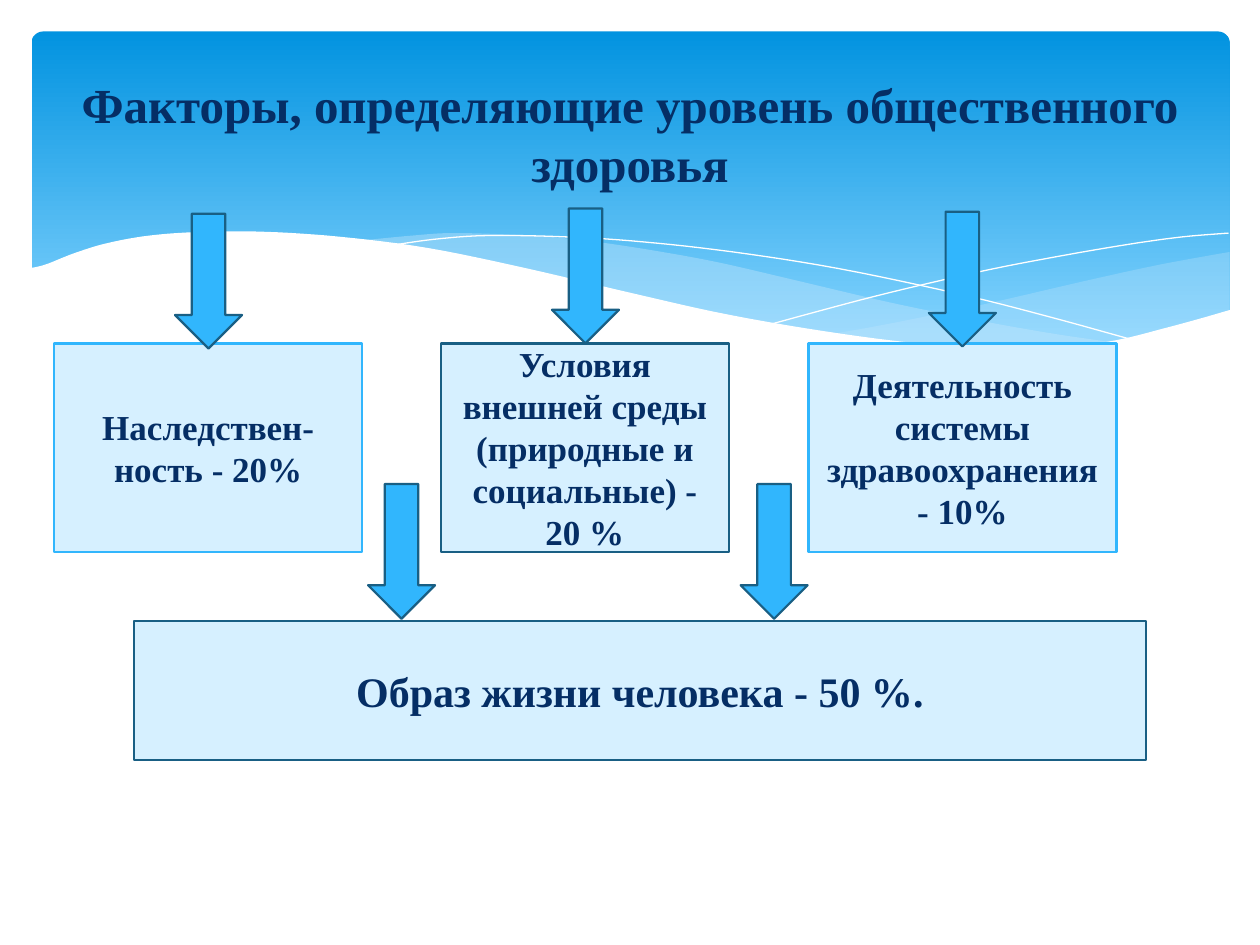
from dataclasses import dataclass

from lxml.etree import SubElement
from pptx import Presentation
from pptx.dml.color import RGBColor
from pptx.enum.shapes import MSO_SHAPE as Preset
from pptx.enum.text import MSO_ANCHOR as Anchor, PP_ALIGN as Align
from pptx.oxml.ns import qn
from pptx.util import Pt


@dataclass(frozen=True)
class Theme:
    font: str = "Times New Roman"
    text: str = "052E65"
    accent: str = "31B6FD"
    accent_dark: str = "195F84"
    box: str = "D6F0FF"
    banner_top: str = "0293E0"
    banner_bottom: str = "83D3FE"
    ripple: str = "C6E7FC"
    white: str = "FFFFFF"
    title_size: float = 28
    factor_size: float = 20
    main_size: float = 24
    outline: float = 1.25


def rgb(value):
    return RGBColor.from_string(value)


def write_text(shape, text, *, size, font, color, bold=True, align=Align.CENTER):
    frame = shape.text_frame
    frame.word_wrap = True
    frame.vertical_anchor = Anchor.MIDDLE
    paragraph = frame.paragraphs[0]
    paragraph.alignment = align
    run = paragraph.add_run()
    run.text = text
    run.font.size = Pt(size)
    run.font.name = font
    run.font.bold = bold
    run.font.color.rgb = rgb(color)


def smooth(knots, steps=6):
    """Return points on a Catmull-Rom curve through the knots."""
    padded = [knots[0], *knots, knots[-1]]
    points = [knots[0]]
    for a, b, c, d in zip(padded, padded[1:], padded[2:], padded[3:]):
        for step in range(1, steps + 1):
            t = step / steps
            points.append(tuple(
                (2 * q + (r - p) * t + (2 * p - 5 * q + 4 * r - s) * t ** 2
                 + (3 * q - p - 3 * r + s) * t ** 3) / 2
                for p, q, r, s in zip(a, b, c, d)))
    return points


class SlideBuilder:
    def __init__(self, slide, theme):
        self.slide = slide
        self.theme = theme

    def preset(self, kind, left, top, width, height, fill=None, line=None):
        shape = self.slide.shapes.add_shape(
            kind, Pt(left), Pt(top), Pt(width), Pt(height))
        self.paint(shape, fill, line, self.theme.outline)
        return shape

    def paint(self, shape, fill, line, width):
        shape.shadow.inherit = False
        if fill:
            shape.fill.solid()
            shape.fill.fore_color.rgb = rgb(fill)
        else:
            shape.fill.background()
        if line:
            shape.line.color.rgb = rgb(line)
            shape.line.width = Pt(width)
        else:
            shape.line.fill.background()

    def banner(self, left, top, width, height):
        shape = self.preset(Preset.ROUNDED_RECTANGLE, left, top, width, height)
        shape.adjustments[0] = 0.034
        shape.fill.gradient()
        shape.fill.gradient_angle = 270
        colors = (self.theme.banner_top, self.theme.banner_bottom)
        for stop, color, position in zip(shape.fill.gradient_stops, colors, (0, 0.9)):
            stop.color.rgb = rgb(color)
            stop.position = position

    def outline(self, points, closed):
        start, *rest = [(Pt(x), Pt(y)) for x, y in points]
        builder = self.slide.shapes.build_freeform(*start)
        builder.add_line_segments(rest, close=closed)
        return builder.convert_to_shape()

    def wave(self, points, fill, opacity=100):
        shape = self.outline(points, closed=True)
        self.paint(shape, fill, None, 0)
        if opacity < 100:
            color = shape.fill._xPr.find(f".//{qn('a:srgbClr')}")
            SubElement(color, qn("a:alpha"), val=str(opacity * 1000))

    def hairline(self, knots):
        shape = self.outline(smooth(knots), closed=False)
        self.paint(shape, None, self.theme.white, 0)

    def title(self, text, left, top, width, height):
        shape = self.slide.shapes.add_textbox(
            Pt(left), Pt(top), Pt(width), Pt(height))
        self.label(shape, text, self.theme.title_size)

    def label(self, shape, text, size):
        write_text(shape, text, size=size, font=self.theme.font,
                   color=self.theme.text)

    def box(self, text, left, top, width, height, line, size):
        shape = self.preset(Preset.RECTANGLE, left, top, width, height,
                            self.theme.box, line)
        self.label(shape, text, size)

    def arrow(self, left, top):
        self.preset(Preset.DOWN_ARROW, left, top, 38.3, 77,
                    self.theme.accent, self.theme.accent_dark)


RIGHT_RIPPLE_TOP = [(702.7, 144), (663, 151.2), (620, 160.6), (561, 174.2),
                    (508.3, 185), (476, 190.8)]
RIGHT_RIPPLE_BOTTOM = [(476, 190.8), (517.7, 195.8), (562.3, 199.4),
                       (601.2, 199.4), (640, 195.8), (673.2, 188.6),
                       (702.7, 177.8)]
LEFT_RIPPLE_TOP = [(643, 196.6), (602.6, 190.8), (558, 182.9), (508.3, 172.8),
                   (453, 159.8), (409.7, 149.8), (370, 142.6), (334.8, 137.5),
                   (302.4, 134.6), (260, 133.2), (236.2, 134.6), (206, 137.5)]
LEFT_RIPPLE_BOTTOM = [(206, 137.5), (246.2, 143.3), (291, 152), (323.3, 159.8),
                      (381.6, 172.8), (432.7, 183.6), (478.8, 191.5),
                      (519.8, 197.3), (556.6, 199.4), (589, 200.2),
                      (617, 199.4), (643, 196.6)]
FALLING_LINE = [(222.5, 140.4), (247.7, 136.8), (278.6, 134.6), (324, 135.4),
                (367.2, 138.2), (419, 144), (478.8, 153.4), (547.2, 167.8),
                (598.3, 180.7), (653, 195.8)]
RISING_LINE = [(441.4, 185), (500.4, 169.2), (558.7, 155.5), (602, 147),
               (644.4, 139.7), (675.4, 135.4), (702, 133.2)]
WHITE_WAVE = [(703.4, 177), (669.6, 186.5), (630, 195.8), (582.5, 199.4),
              (535.7, 197.3), (481, 190.8), (417, 180), (362.2, 167.8),
              (301, 153.4), (244.8, 141.8), (195, 135.4), (152, 132.5),
              (116, 132.5), (85.7, 134.6), (61.2, 139), (42.5, 144.7),
              (26, 151.2), (16.6, 153.4)]
WHITE_WAVE_BASE = [(16.6, 237), (703.4, 237)]


def main():
    presentation = Presentation()
    presentation.slide_width, presentation.slide_height = Pt(720), Pt(540)
    theme = Theme()
    slide = presentation.slides.add_slide(presentation.slide_layouts[6])
    builder = SlideBuilder(slide, theme)

    builder.banner(18, 18, 684.7, 194.4)
    builder.wave(smooth(RIGHT_RIPPLE_TOP) + smooth(RIGHT_RIPPLE_BOTTOM),
                 theme.ripple, 29)
    builder.wave(smooth(LEFT_RIPPLE_TOP) + smooth(LEFT_RIPPLE_BOTTOM),
                 theme.ripple, 40)
    builder.hairline(FALLING_LINE)
    builder.hairline(RISING_LINE)
    builder.wave(smooth(WHITE_WAVE) + WHITE_WAVE_BASE, theme.white)

    builder.title("Факторы, определяющие уровень общественного здоровья",
                  36, 26.8, 648, 98.6)
    factors = [
        ("Наследствен-ность - 20%", 31, 176, theme.accent),
        ("Условия внешней среды (природные и социальные) - 20 %",
         252, 164.5, theme.accent_dark),
        ("Деятельность системы здравоохранения - 10%", 462, 176, theme.accent),
    ]
    for text, left, width, line in factors:
        builder.box(text, left, 196.3, width, 119, line, theme.factor_size)
    builder.box("Образ жизни человека - 50 %.", 76.5, 355, 578.3, 79.3,
                theme.accent_dark, theme.main_size)

    for left, top in [(100, 122.2), (315.4, 119.2), (530.8, 121),
                      (210.3, 276.6), (423.2, 276.6)]:
        builder.arrow(left, top)

    presentation.save("out.pptx")


if __name__ == "__main__":
    main()
